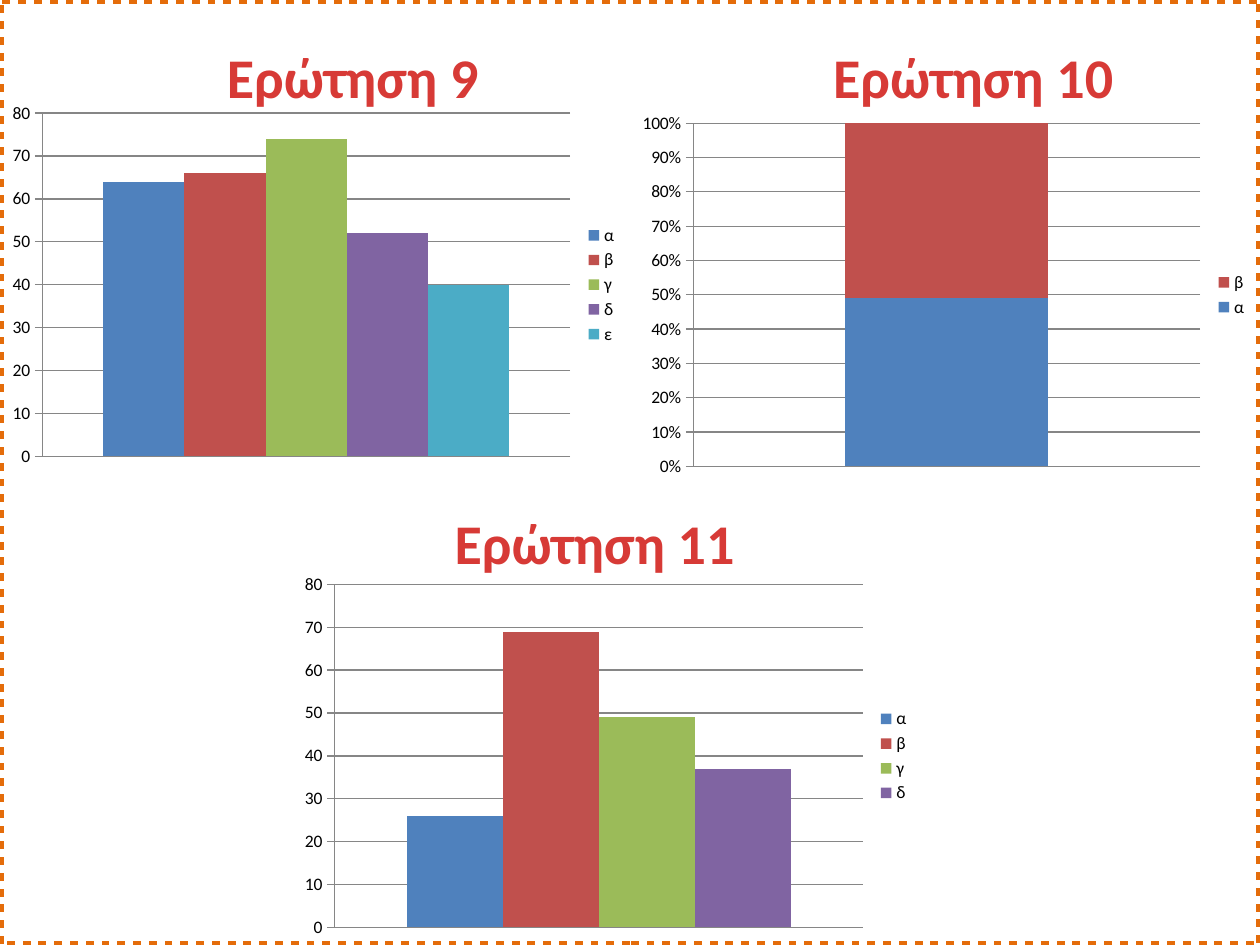
from pptx import Presentation
from pptx.chart.data import CategoryChartData
from pptx.dml.color import RGBColor
from pptx.enum.chart import XL_CHART_TYPE, XL_LEGEND_POSITION, XL_TICK_MARK
from pptx.enum.dml import MSO_LINE
from pptx.enum.shapes import MSO_SHAPE
from pptx.enum.text import MSO_AUTO_SIZE, PP_ALIGN
from pptx.util import Inches, Pt

CLUSTERED = XL_CHART_TYPE.COLUMN_CLUSTERED
STACKED_100 = XL_CHART_TYPE.COLUMN_STACKED_100
LEGEND_RIGHT = XL_LEGEND_POSITION.RIGHT
CROSS = XL_TICK_MARK.CROSS
NO_TICK = XL_TICK_MARK.NONE
DOTS = MSO_LINE.ROUND_DOT
RECTANGLE = MSO_SHAPE.RECTANGLE
FIT_SHAPE = MSO_AUTO_SIZE.SHAPE_TO_FIT_TEXT
CENTER = PP_ALIGN.CENTER

FONT = "Calibri"
WIDTH, HEIGHT = Inches(10), Inches(7.5)
COLUMN, ROW = WIDTH / 100, HEIGHT / 100
CHART_ROWS, TITLE_ROWS = 40, 8.53
COLORS = {
    "title": "D73A36",
    "text": "000000",
    "grid": "868686",
    "border": "E46C0A",
    "α": "4F81BD",
    "β": "C0504D",
    "γ": "9BBB59",
    "δ": "8064A2",
    "ε": "4BACC6",
}
QUESTIONS = [
    dict(box=(0, 3.87, 50, 46.26), title="Ερώτηση 9", title_center=0.56,
         title_columns=22.2, kind=CLUSTERED,
         answers={"α": 64, "β": 66, "γ": 74, "δ": 52, "ε": 40}),
    dict(box=(50, 3.87, 50, 47.33), title="Ερώτηση 10", title_center=0.545,
         title_columns=24.5, kind=STACKED_100, answers={"α": 49, "β": 51}),
    dict(box=(23.2, 53.2, 50, 46.8), title="Ερώτηση 11", title_center=0.48,
         title_columns=24.5, kind=CLUSTERED,
         answers={"α": 26, "β": 69, "γ": 49, "δ": 37}),
]


def rgb(name):
    """Return the named palette colour."""
    return RGBColor.from_string(COLORS[name])


def place(left, top, columns, rows):
    """Turn grid columns and rows into slide lengths."""
    return int(left * COLUMN), int(top * ROW), int(columns * COLUMN), int(rows * ROW)


def format_font(font, size, color, bold=False):
    """Set the face, size, weight and colour of a font."""
    font.name, font.size, font.bold = FONT, Pt(size), bold
    font.color.rgb = rgb(color)


def add_text(slide, text, box, size=32, color="title", bold=True, align=CENTER):
    """Add one line of text in a grid box."""
    frame = slide.shapes.add_textbox(*place(*box)).text_frame
    frame.word_wrap = False
    frame.auto_size = FIT_SHAPE
    paragraph = frame.paragraphs[0]
    paragraph.alignment = align
    run = paragraph.add_run()
    run.text = text
    format_font(run.font, size, color, bold)


def style_line(line, color, width):
    """Set the colour and width of a line."""
    line.color.rgb = rgb(color)
    line.width = Pt(width)


def add_answers(slide, box, kind, answers):
    """Add a column chart with one series for each answer."""
    data = CategoryChartData()
    data.categories = ["1"]
    for answer, value in answers.items():
        data.add_series(answer, [value])
    chart = slide.shapes.add_chart(kind, *place(*box), data).chart
    chart.has_title = False
    format_font(chart.font, 10, "text")
    chart.has_legend = True
    chart.legend.position = LEGEND_RIGHT
    chart.legend.include_in_layout = False
    chart.category_axis.visible = False
    scale = chart.value_axis
    scale.has_major_gridlines = True
    scale.major_tick_mark, scale.minor_tick_mark = CROSS, NO_TICK
    scale.tick_labels.number_format = "0%" if kind == STACKED_100 else "General"
    scale.tick_labels.number_format_is_linked = False
    for line in (scale.format.line, scale.major_gridlines.format.line):
        style_line(line, "grid", 0.75)
    plot = chart.plots[0]
    plot.gap_width = 150
    plot.overlap = 100 if kind == STACKED_100 else 0
    plot.vary_by_categories = False
    for series in plot.series:
        series.format.fill.solid()
        series.format.fill.fore_color.rgb = rgb(series.name)


def add_question(slide, box, title, title_center, title_columns, kind, answers):
    """Place a question's title at the top of its box and its chart at the bottom."""
    left, top, columns, rows = box
    title_left = left + columns * title_center - title_columns / 2
    chart_top = top + rows - CHART_ROWS
    add_answers(slide, (left, chart_top, columns, CHART_ROWS), kind, answers)
    add_text(slide, title, (title_left, top, title_columns, TITLE_ROWS))


def add_border(slide, box):
    """Draw the dotted frame along the edge of a box."""
    border = slide.shapes.add_shape(RECTANGLE, *place(*box))
    border.shadow.inherit = False
    border.fill.background()
    style_line(border.line, "border", 4.5)
    border.line.dash_style = DOTS


def main():
    """Build the slide and save it."""
    deck = Presentation()
    deck.slide_width, deck.slide_height = WIDTH, HEIGHT
    slide = deck.slides.add_slide(deck.slide_layouts[6])
    for question in QUESTIONS:
        add_question(slide, **question)
    add_border(slide, (0, 0, 100, 100))
    deck.save("out.pptx")


if __name__ == "__main__":
    main()
